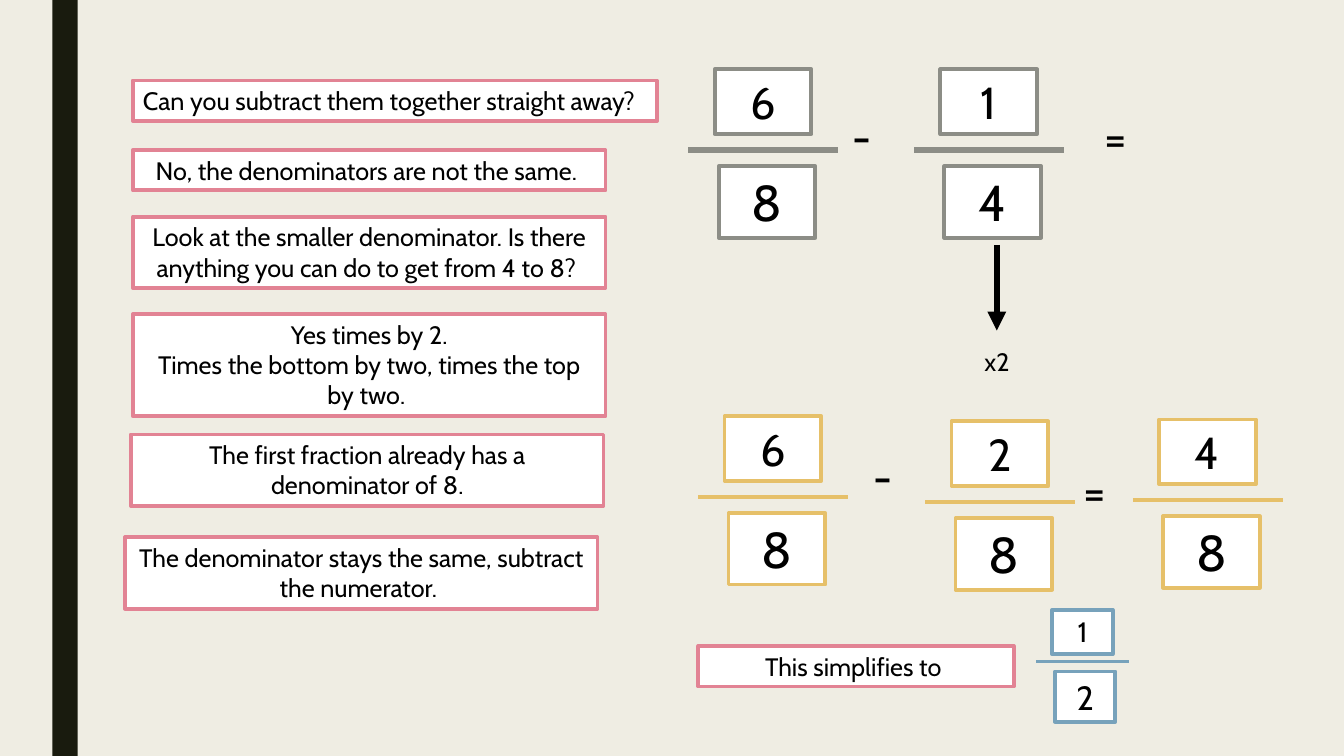
from dataclasses import dataclass

from lxml.etree import SubElement
from pptx import Presentation
from pptx.dml.color import RGBColor
from pptx.enum.shapes import MSO_CONNECTOR as CONNECTOR, MSO_SHAPE as SHAPE
from pptx.enum.text import MSO_AUTO_SIZE as AUTO_SIZE, PP_ALIGN as ALIGN
from pptx.oxml.ns import qn
from pptx.util import Cm, Pt

FONT = "Cabin"
COLOURS = {
    "background": "EFEDE3",
    "band": "191B0E",
    "text": "000000",
    "box": "FFFFFF",
    "pink": "E28394",
    "grey": "8C8D86",
    "yellow": "E6C069",
    "blue": "77A2BB",
}
LINE_HEIGHTS = {1: 1.02, 2: 1.8, 3: 2.57}
STEP_WIDTH = 11.91
STEPS = [
    (3.35, 3.78, 1, ["No, the denominators are not the same. "]),
    (3.35, 5.46, 2, ["Look at the smaller denominator. Is there "
                     "anything you can do to get from 4 to 8? "]),
    (3.35, 7.92, 3, ["Yes times by 2.",
                     "Times the bottom by two, times the top by two. "]),
    (3.3, 10.95, 2, ["The first fraction already has a denominator of 8."]),
    (3.15, 13.54, 2, ["The denominator stays the same, subtract the numerator. "]),
]
SIGNS = [("-", 21.23, 2.62), ("=", 27.58, 2.64), ("-", 21.77, 11.18), ("=", 27.05, 11.56)]


@dataclass
class FractionStyle:
    """Measures of a fraction, in centimetres and points."""
    colour: str
    bar_weight: float
    box_width: float = 2.44
    heights: tuple = (1.63, 1.8)
    indents: tuple = (0.66, 0.76)
    sizes: tuple = (32, 36)
    bar_drop: float = 2.03
    bottom_drop: float = 2.44
    bar_width: float = 3.78


QUESTION = FractionStyle("grey", 4.5)
WORKING = FractionStyle("yellow", 2.75)
ANSWER = FractionStyle("blue", 2.75, 1.52, (1.12, 1.27), (0.41, 0.48), (20, 24),
                       1.3, 1.55, 2.34)
FRACTIONS = [
    ("1", "4", 23.04, 1.75, QUESTION),
    ("6", "8", 17.35, 1.75, QUESTION),
    ("2", "8", 23.32, 10.62, WORKING),
    ("6", "8", 17.6, 10.49, WORKING),
    ("4", "8", 28.55, 10.57, WORKING),
    ("1", "2", 26.11, 15.37, ANSWER),
]


def colour_of(name):
    """Return the named colour."""
    return RGBColor.from_string(COLOURS[name])


def add_text(shapes, lines, left, top, width, height, size=18, align=ALIGN.LEFT, wrap=True):
    """Add a text box with one paragraph for each line."""
    shape = shapes.add_textbox(Cm(left), Cm(top), Cm(width), Cm(height))
    frame = shape.text_frame
    frame.word_wrap = wrap
    frame.auto_size = AUTO_SIZE.SHAPE_TO_FIT_TEXT
    for index, line in enumerate(lines):
        paragraph = frame.add_paragraph() if index else frame.paragraphs[0]
        paragraph.alignment = align
        run = paragraph.add_run()
        run.text = line
        run.font.name = FONT
        run.font.size = Pt(size)
        run.font.color.rgb = colour_of("text")
    return shape


def add_box(shapes, lines, left, top, width, height, outline, size=18,
            align=ALIGN.CENTER, wrap=True):
    """Add a white text box with a coloured outline."""
    shape = add_text(shapes, lines, left, top, width, height, size, align, wrap)
    shape.fill.solid()
    shape.fill.fore_color.rgb = colour_of("box")
    shape.line.color.rgb = colour_of(outline)
    shape.line.width = Pt(2.75)


def add_line(shapes, start, end, colour, weight):
    """Add a straight line without a shadow."""
    line = shapes.add_connector(CONNECTOR.STRAIGHT, *map(Cm, start + end))
    line.line.color.rgb = colour_of(colour)
    line.line.width = Pt(weight)
    SubElement(line._element.spPr, qn("a:effectLst"))
    return line


def add_arrow(shapes, start, end):
    """Add a thick line that ends in a triangle."""
    arrow = add_line(shapes, start, end, "text", 4.5)
    SubElement(arrow.line._get_or_add_ln(), qn("a:tailEnd"), type="triangle")


def add_fraction(slide, numerator, denominator, left, top, style):
    """Add a grouped fraction: two boxes and the bar between them."""
    shapes = slide.shapes.add_group_shape().shapes
    tops = (top, top + style.bottom_drop)
    parts = zip((numerator, denominator), style.indents, tops, style.heights, style.sizes)
    for number, indent, box_top, height, size in parts:
        add_box(shapes, [number], left + indent, box_top, style.box_width, height,
                style.colour, size)
    bar_top = top + style.bar_drop
    add_line(shapes, (left, bar_top), (left + style.bar_width, bar_top),
             style.colour, style.bar_weight)


def add_background(slide, height):
    """Colour the slide and add the dark band at its left."""
    slide.background.fill.solid()
    slide.background.fill.fore_color.rgb = colour_of("background")
    band = slide.shapes.add_shape(SHAPE.RECTANGLE, Cm(1.32), 0, Cm(0.64), height)
    band.shadow.inherit = False
    band.fill.solid()
    band.fill.fore_color.rgb = colour_of("band")
    band.line.fill.background()


def main():
    """Build the slide and save it."""
    presentation = Presentation()
    presentation.slide_width = Cm(33.87)
    presentation.slide_height = Cm(19.05)
    slide = presentation.slides.add_slide(presentation.slide_layouts[6])
    shapes = slide.shapes
    add_background(slide, presentation.slide_height)

    add_box(shapes, ["Can you subtract them together straight away?"],
            3.35, 2.03, 13.21, LINE_HEIGHTS[1], "pink", align=ALIGN.LEFT, wrap=False)
    for left, top, line_count, lines in STEPS:
        add_box(shapes, lines, left, top, STEP_WIDTH, LINE_HEIGHTS[line_count], "pink")
    add_box(shapes, ["This simplifies to "], 17.6, 16.28, 7.95, LINE_HEIGHTS[1], "pink")

    for fraction in FRACTIONS:
        add_fraction(slide, *fraction)
    for sign, left, top in SIGNS:
        add_text(shapes, [sign], left, top, 1.04, 1.63, 32)
    add_arrow(shapes, (25.12, 6.17), (25.12, 8.33))
    add_text(shapes, ["x2"], 24.56, 8.59, 1.17, LINE_HEIGHTS[1])
    presentation.save("out.pptx")


if __name__ == "__main__":
    main()
